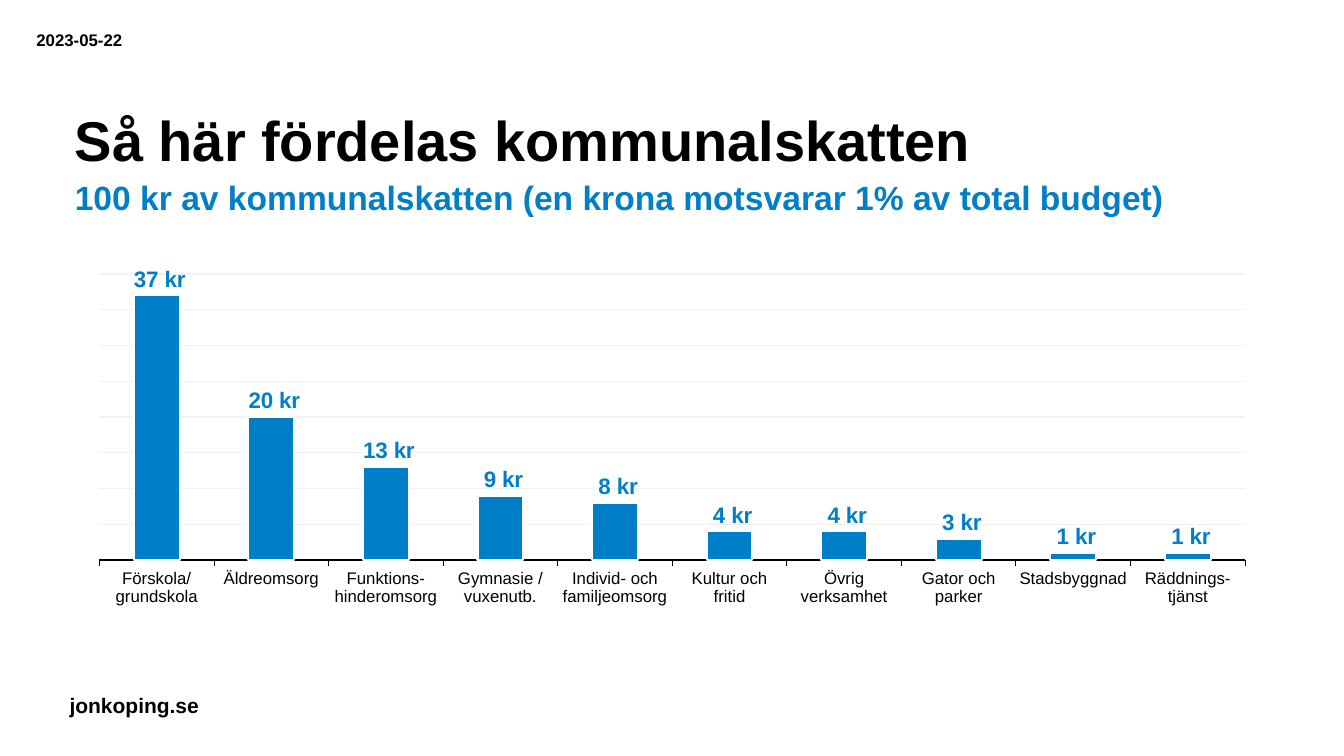
from lxml import etree
from pptx import Presentation
from pptx.chart.data import CategoryChartData
from pptx.dml.color import RGBColor
from pptx.enum.chart import XL_CHART_TYPE, XL_LABEL_POSITION, XL_TICK_LABEL_POSITION, XL_TICK_MARK
from pptx.enum.text import MSO_ANCHOR
from pptx.util import Pt

BLACK = RGBColor(0x00, 0x00, 0x00)
BLUE = RGBColor(0x00, 0x7F, 0xC7)
WHITE = RGBColor(0xFF, 0xFF, 0xFF)
PALE_GREY = RGBColor(0xF2, 0xF2, 0xF2)
FONT = "Arial"
KRONOR = r'_-* #\ ##0\ "kr"_-;\-* #\ ##0\ "kr"_-;_-'

prs = Presentation()
prs.slide_width, prs.slide_height = Pt(960), Pt(540)
slide = prs.slides.add_slide(prs.slide_layouts[6])


def set_font(font, size, color=BLACK, bold=False):
    font.name, font.size, font.bold = FONT, Pt(size), bold
    font.color.rgb = color


def add_text(text, left, top, width, height, size, color=BLACK,
             anchor=MSO_ANCHOR.TOP, wrap=True, spacing=None):
    frame = slide.shapes.add_textbox(Pt(left), Pt(top), Pt(width), Pt(height)).text_frame
    frame.margin_left = frame.margin_right = frame.margin_top = frame.margin_bottom = 0
    frame.word_wrap = wrap
    frame.vertical_anchor = anchor
    paragraph = frame.paragraphs[0]
    paragraph.line_spacing = spacing
    run = paragraph.add_run()
    run.text = text
    set_font(run.font, size, color, bold=True)


# Date, headings and web address
add_text("2023-05-22", 26, 21.6, 70.5, 14.4, 12)
add_text("Så här fördelas kommunalskatten", 53.5, 36, 852.5, 88, 40,
         anchor=MSO_ANCHOR.BOTTOM, spacing=0.9)
add_text("100 kr av kommunalskatten (en krona motsvarar 1% av total budget)",
         53.5, 131.8, 852.5, 23, 24, color=BLUE, anchor=MSO_ANCHOR.BOTTOM)
add_text("jonkoping.se", 49.7, 494.6, 93.6, 18, 15, wrap=False)

# Share of each 100 kr
tax_shares = {
    "Förskola/ grundskola": 37,
    "Äldreomsorg": 20,
    "Funktions- hinderomsorg": 13,
    "Gymnasie / vuxenutb.": 9,
    "Individ- och familjeomsorg": 8,
    "Kultur och fritid": 4,
    "Övrig verksamhet": 4,
    "Gator och parker": 3,
    "Stadsbyggnad": 1,
    "Räddnings- tjänst": 1,
}
tax_data = CategoryChartData()
tax_data.categories = list(tax_shares)
tax_data.add_series("Series 1", list(tax_shares.values()))
tax_chart = slide.shapes.add_chart(XL_CHART_TYPE.COLUMN_CLUSTERED, Pt(54), Pt(190.8),
                                   Pt(852.5), Pt(246.2), tax_data).chart
tax_chart.has_legend = False
tax_chart.has_title = False
set_font(tax_chart.font, 10)

# Bars and their labels
tax_plot = tax_chart.plots[0]
tax_plot.gap_width = 150
tax_plot.vary_by_categories = False
shares = tax_plot.series[0]
shares.format.fill.solid()
shares.format.fill.fore_color.rgb = BLUE
shares.format.line.color.rgb = WHITE
shares.format.line.width = Pt(1.5)
share_labels = shares.data_labels
share_labels.show_value = True
share_labels.position = XL_LABEL_POSITION.OUTSIDE_END
share_labels.number_format = KRONOR
share_labels.number_format_is_linked = False
set_font(share_labels.font, 16, BLUE, bold=True)

# Axes
services = tax_chart.category_axis
services.major_tick_mark = XL_TICK_MARK.OUTSIDE
services.tick_label_position = XL_TICK_LABEL_POSITION.LOW
services.format.line.color.rgb = BLACK
services.format.line.width = Pt(0.75)
set_font(services.tick_labels.font, 12)
kronor = tax_chart.value_axis
kronor.minimum_scale, kronor.maximum_scale, kronor.major_unit = 0, 40, 5
kronor.has_major_gridlines = True
kronor.major_gridlines.format.line.color.rgb = PALE_GREY
kronor.major_gridlines.format.line.width = Pt(0.75)
kronor.visible = False

# Fixed inner plot area, as fractions of the chart
plot_area = tax_plot._element.getparent()
NS = "{http://schemas.openxmlformats.org/drawingml/2006/chart}"
for old_layout in plot_area.findall(NS + "layout"):
    plot_area.remove(old_layout)
layout = etree.Element(NS + "layout")
manual = etree.SubElement(layout, NS + "manualLayout")
for tag, value in [("layoutTarget", "inner"), ("xMode", "edge"), ("yMode", "edge"),
                   ("x", "0.02"), ("y", "0.02"), ("w", "0.96"), ("h", "0.83")]:
    etree.SubElement(manual, NS + tag, val=value)
plot_area.insert(0, layout)

prs.save("out.pptx")
